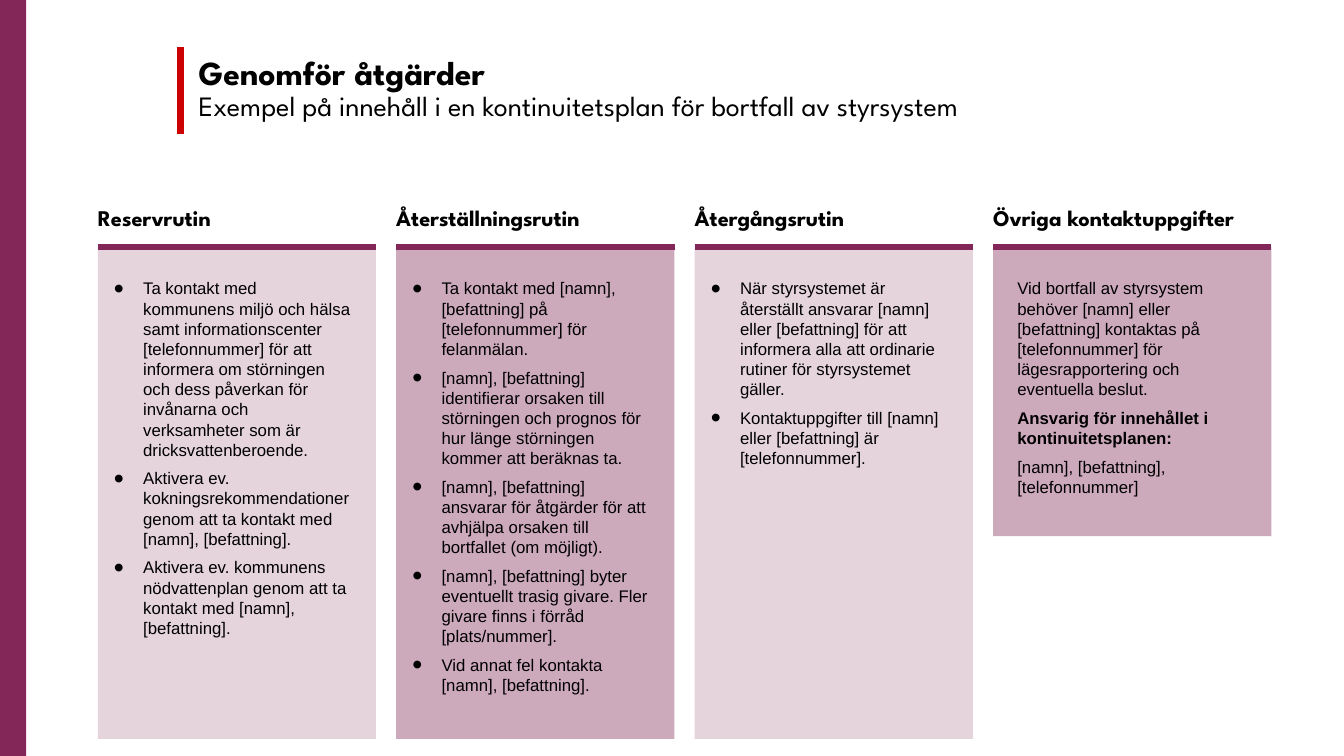
from pptx import Presentation
from pptx.dml.color import RGBColor
from pptx.enum.shapes import MSO_CONNECTOR as Connector, MSO_SHAPE as Shape
from pptx.enum.text import MSO_ANCHOR as Anchor, MSO_AUTO_SIZE as AutoSize, PP_ALIGN as Align
from pptx.oxml.xmlchemy import OxmlElement
from pptx.util import Inches, Pt

COLORS = {
    "plum": "822757",
    "light": "E6D4DD",
    "medium": "CDA9BC",
    "red": "CC0000",
    "text": "000000",
}
HEADING_FONT, BODY_FONT = "League Spartan", "Arial"
SLIDE_WIDTH, SLIDE_HEIGHT = 13.33, 7.5
GRID_LEFT, COLUMN_WIDTH, GUTTER = 0.97, 2.76, 0.2
HEADING_TOP, HEADING_HEIGHT = 2.02, 0.27
PANEL_TOP, TALL_PANEL, SHORT_PANEL = 2.45, 4.88, 2.87
RULE_X, RULE_TOP, RULE_BOTTOM = 1.79, 0.47, 1.33
BULLET_INDENT = 0.29

TITLE = "Genomför åtgärder"
SUBTITLE = "Exempel på innehåll i en kontinuitetsplan för bortfall av styrsystem"
ROUTINES = [
    ("Reservrutin", [
        "Ta kontakt med kommunens miljö och hälsa samt informationscenter [telefonnummer] "
        "för att informera om störningen och dess påverkan för invånarna och verksamheter "
        "som är dricksvattenberoende.",
        "Aktivera ev. kokningsrekommendationer genom att ta kontakt med [namn], [befattning].",
        "Aktivera ev. kommunens nödvattenplan genom att ta kontakt med [namn], [befattning].",
    ]),
    ("Återställningsrutin", [
        "Ta kontakt med [namn], [befattning] på [telefonnummer] för felanmälan.",
        "[namn], [befattning] identifierar orsaken till störningen och prognos för hur länge "
        "störningen kommer att beräknas ta.",
        "[namn], [befattning] ansvarar för åtgärder för att avhjälpa orsaken till bortfallet "
        "(om möjligt).",
        "[namn], [befattning] byter eventuellt trasig givare. Fler givare finns i förråd "
        "[plats/nummer].",
        "Vid annat fel kontakta [namn], [befattning].",
    ]),
    ("Återgångsrutin", [
        "När styrsystemet är återställt ansvarar [namn] eller [befattning] för att informera "
        "alla att ordinarie rutiner för styrsystemet gäller.",
        "Kontaktuppgifter till [namn] eller [befattning] är [telefonnummer].",
    ]),
]
CONTACTS_HEADING = "Övriga kontaktuppgifter"
CONTACTS = [
    "Vid bortfall av styrsystem behöver [namn] eller [befattning] kontaktas på "
    "[telefonnummer] för lägesrapportering och eventuella beslut.",
    "Ansvarig för innehållet i kontinuitetsplanen:",
    "[namn], [befattning], [telefonnummer]",
]


def color(name):
    return RGBColor.from_string(COLORS[name])


def column_left(column):
    return GRID_LEFT + column * (COLUMN_WIDTH + GUTTER)


def style(font, name, size, bold=False):
    font.name, font.size, font.bold = name, Pt(size), bold
    font.color.rgb = color("text")


def set_insets(frame, left, top, right, bottom):
    frame.margin_left, frame.margin_top = Inches(left), Inches(top)
    frame.margin_right, frame.margin_bottom = Inches(right), Inches(bottom)


def add_bullet(paragraph):
    properties = paragraph._p.get_or_add_pPr()
    properties.set("marL", str(Inches(BULLET_INDENT)))
    properties.set("indent", str(-Inches(BULLET_INDENT)))
    for tag, key, value in (
        ("a:buSzPct", "val", "170000"),
        ("a:buFont", "typeface", BODY_FONT),
        ("a:buChar", "char", "•"),
    ):
        element = OxmlElement(tag)
        element.set(key, value)
        properties.append(element)


def add_block(slide, fill, left, top, width, height):
    block = slide.shapes.add_shape(
        Shape.RECTANGLE, Inches(left), Inches(top), Inches(width), Inches(height))
    block.shadow.inherit = False
    block.fill.solid()
    block.fill.fore_color.rgb = color(fill)
    block.line.fill.background()
    return block


def add_rule(slide, start, end, line_color, width):
    rule = slide.shapes.add_connector(Connector.STRAIGHT, *map(Inches, start + end))
    rule.line.color.rgb = color(line_color)
    rule.line.width = Pt(width)
    rule._element.spPr.append(OxmlElement("a:effectLst"))


def add_heading(slide, column, text):
    heading = slide.shapes.add_textbox(
        Inches(column_left(column)), Inches(HEADING_TOP),
        Inches(COLUMN_WIDTH), Inches(HEADING_HEIGHT))
    frame = heading.text_frame
    frame.word_wrap = True
    frame.auto_size = AutoSize.SHAPE_TO_FIT_TEXT
    frame.vertical_anchor = Anchor.BOTTOM
    set_insets(frame, 0, 0, 0.2, 0)
    frame.text = text
    frame.paragraphs[0].space_after = Pt(6)
    style(frame.paragraphs[0].runs[0].font, HEADING_FONT, 16, True)


def add_panel(slide, column, height, texts, bulleted):
    fill = "medium" if column % 2 else "light"
    panel = add_block(slide, fill, column_left(column), PANEL_TOP, COLUMN_WIDTH, height)
    frame = panel.text_frame
    frame.word_wrap = True
    frame.vertical_anchor = Anchor.TOP
    set_insets(frame, 0.16 if bulleted else 0.24, 0.31, 0.24, 0.2)
    frame.text = "\n".join(texts)
    for paragraph in frame.paragraphs:
        paragraph.alignment = Align.LEFT
        paragraph.space_after = Pt(6)
        if bulleted:
            add_bullet(paragraph)
        style(paragraph.runs[0].font, BODY_FONT, 12)
    return frame


def add_column(slide, column, heading, texts, height=TALL_PANEL, bulleted=True):
    frame = add_panel(slide, column, height, texts, bulleted)
    add_heading(slide, column, heading)
    left = column_left(column)
    add_rule(slide, (left, PANEL_TOP), (left + COLUMN_WIDTH, PANEL_TOP), "plum", 4)
    return frame


def fill_title(slide):
    title = slide.shapes.title
    title.left, title.top = Inches(1.87), Inches(0.51)
    title.width, title.height = Inches(9.68), Inches(0.77)
    frame = title.text_frame
    frame.word_wrap = True
    frame.auto_size = AutoSize.NONE
    frame.vertical_anchor = Anchor.TOP
    set_insets(frame, 0.1, 0.05, 0.1, 0.05)
    frame.text = f"{TITLE}\v{SUBTITLE}"
    paragraph = frame.paragraphs[0]
    paragraph.alignment = Align.LEFT
    paragraph.line_spacing = 0.9
    name, subtitle = paragraph.runs
    style(name.font, HEADING_FONT, 24, True)
    style(subtitle.font, HEADING_FONT, 20)


def main():
    deck = Presentation()
    deck.slide_width, deck.slide_height = Inches(SLIDE_WIDTH), Inches(SLIDE_HEIGHT)
    slide = deck.slides.add_slide(deck.slide_layouts.get_by_name("Title Only"))
    add_block(slide, "plum", 0, 0, 0.26, SLIDE_HEIGHT)
    fill_title(slide)
    add_rule(slide, (RULE_X, RULE_TOP), (RULE_X, RULE_BOTTOM), "red", 5)
    for column, (heading, steps) in enumerate(ROUTINES):
        add_column(slide, column, heading, steps)
    contacts = add_column(
        slide, len(ROUTINES), CONTACTS_HEADING, CONTACTS, SHORT_PANEL, bulleted=False)
    contacts.paragraphs[1].runs[0].font.bold = True
    deck.save("out.pptx")


if __name__ == "__main__":
    main()
